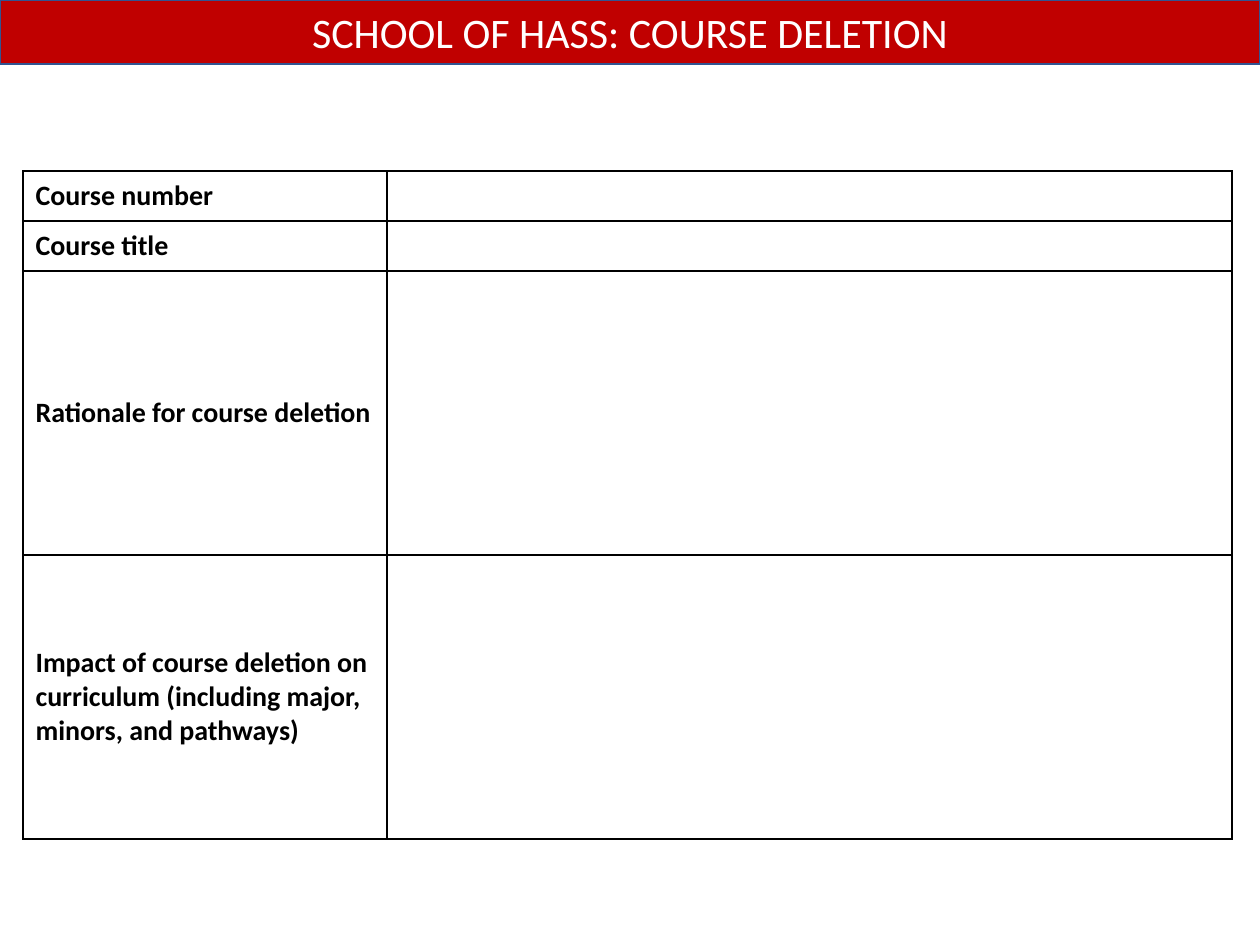
from lxml.etree import SubElement as Sub
from pptx import Presentation
from pptx.dml.color import RGBColor as Rgb
from pptx.enum.shapes import MSO_SHAPE as Shape
from pptx.enum.text import MSO_ANCHOR as Anchor, PP_ALIGN as Align
from pptx.oxml.ns import qn
from pptx.util import Pt

TITLE = "SCHOOL OF HASS: COURSE DELETION"
ROWS = [
    ("Course number", 50),
    ("Course title", 50),
    ("Rationale for course deletion", 284),
    ("Impact of course deletion on curriculum (including major, minors, and pathways)", 284),
]
COLS = [364, 845]
LEFT, TOP = 23, 171
WIDE, HIGH, BAR = 1260, 945, 64
RED, BLUE, BLACK, WHITE = "C00000", "325491", "000000", "FFFFFF"
HEAD = {"name": "Calibri", "size": Pt(24), "bold": False}
LABEL = {"name": "Calibri", "size": Pt(16), "bold": True}


def px(n):
    """Turn px into EMU."""
    return round(n * 914400 / 126)


def tint(part, hue):
    """Set a colour from a hex string."""
    part.rgb = Rgb.from_string(hue)


def paint(fill, hue):
    """Give a solid fill."""
    fill.solid()
    tint(fill.fore_color, hue)


def style(font, look, hue):
    """Apply a dict of font values and a colour."""
    for key, val in look.items():
        setattr(font, key, val)
    tint(font.color, hue)


def edge(cell):
    """Draw thin borders around a cell."""
    props = cell._tc.get_or_add_tcPr()
    for i, side in enumerate(("lnL", "lnR", "lnT", "lnB")):
        line = props.makeelement(qn("a:" + side), {"w": str(Pt(1))})
        props.insert(i, line)
        Sub(Sub(line, qn("a:solidFill")), qn("a:srgbClr"), val=BLACK)


def form(slide):
    """Add the table of course details."""
    size = sum(COLS), sum(high for _, high in ROWS)
    frame = slide.shapes.add_table(len(ROWS), len(COLS), *map(px, (LEFT, TOP, *size)))
    table = frame.table
    table.first_row = table.horz_banding = False
    for col, wide in zip(table.columns, COLS):
        col.width = px(wide)
    for row, (text, high) in zip(table.rows, ROWS):
        row.height = px(high)
        for cell, words in zip(row.cells, (text, "")):
            cell.text = words
            cell.vertical_anchor = Anchor.MIDDLE
            paint(cell.fill, WHITE)
            edge(cell)
            style(cell.text_frame.paragraphs[0].font, LABEL, BLACK)


def banner(slide):
    """Add the title bar."""
    bar = slide.shapes.add_shape(Shape.RECTANGLE, 0, 0, px(WIDE), px(BAR))
    bar.shadow.inherit = False
    paint(bar.fill, RED)
    tint(bar.line.color, BLUE)
    bar.line.width = Pt(1)
    frame = bar.text_frame
    frame.text = TITLE
    frame.word_wrap = True
    frame.vertical_anchor = Anchor.MIDDLE
    para = frame.paragraphs[0]
    para.alignment = Align.CENTER
    style(para.font, HEAD, WHITE)


def main():
    """Build and save the slide."""
    deck = Presentation()
    deck.slide_width, deck.slide_height = px(WIDE), px(HIGH)
    slide = deck.slides.add_slide(deck.slide_layouts[6])
    form(slide)
    banner(slide)
    deck.save("out.pptx")


if __name__ == "__main__":
    main()
